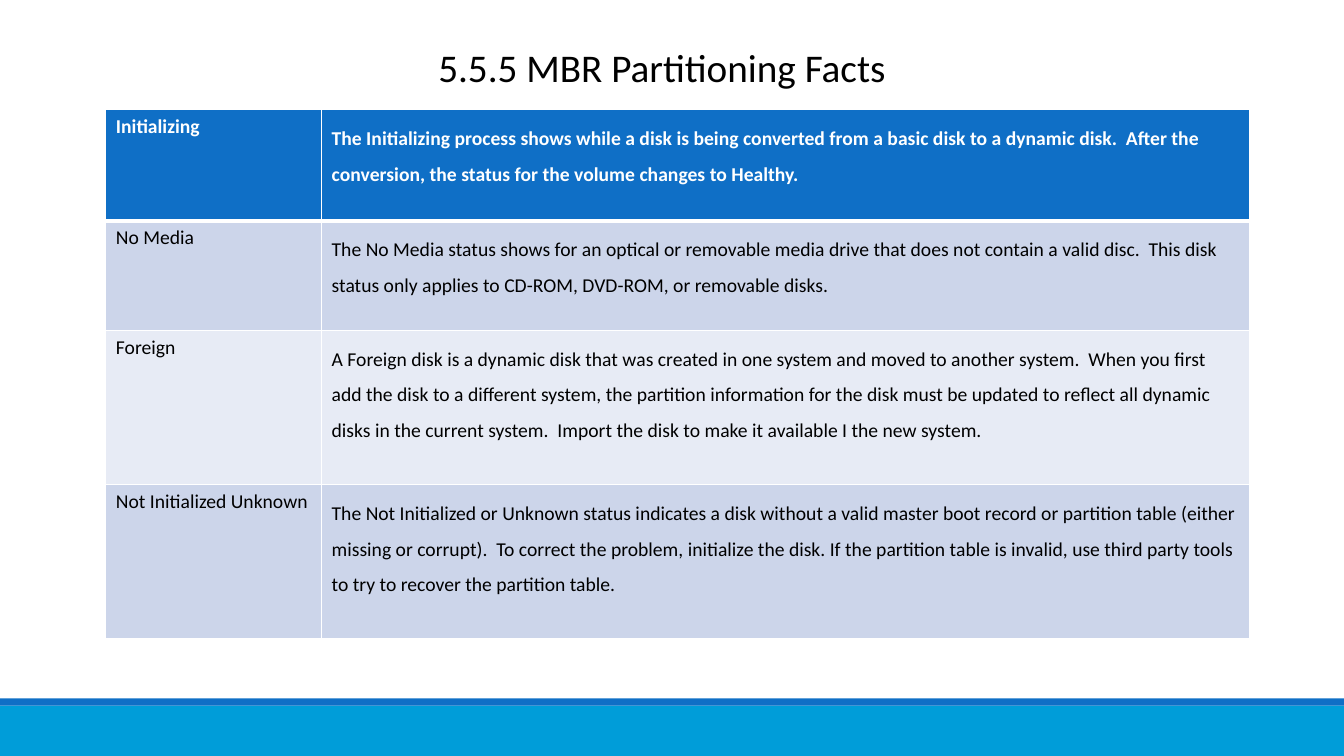
from dataclasses import dataclass

from lxml.etree import SubElement
from pptx import Presentation
from pptx.dml.color import RGBColor
from pptx.enum.shapes import MSO_SHAPE
from pptx.enum.text import PP_ALIGN
from pptx.oxml.ns import qn
from pptx.slide import Slide
from pptx.table import _Cell
from pptx.text.text import _Paragraph
from pptx.util import Inches, Pt


@dataclass(frozen=True)
class Theme:
    font: str = "Calibri"
    title_size: int = 28
    table_size: int = 14
    text: str = "000000"
    white: str = "FFFFFF"
    blue: str = "0F6FC6"
    cyan: str = "009DD9"
    dark_band: str = "CCD5EA"
    light_band: str = "E7EBF5"


@dataclass(frozen=True)
class Band:
    top: float
    height: float
    color: str


@dataclass(frozen=True)
class StatusRow:
    status: str
    description: str
    height: float


THEME = Theme()
SLIDE_WIDTH, SLIDE_HEIGHT = 13.33, 7.5
COLUMN_WIDTHS = (2.14, 9.2)
FOOTER_BANDS = (Band(7, 0.5, THEME.cyan), Band(6.93, 0.07, THEME.blue))
STATUS_ROWS = (
    StatusRow(
        "Initializing",
        "The Initializing process shows while a disk is being converted from a basic disk "
        "to a dynamic disk.  After the conversion, the status for the volume changes to Healthy.",
        1.1,
    ),
    StatusRow(
        "No Media",
        "The No Media status shows for an optical or removable media drive that does not "
        "contain a valid disc.  This disk status only applies to CD-ROM, DVD-ROM, or "
        "removable disks.",
        1.09,
    ),
    StatusRow(
        "Foreign",
        "A Foreign disk is a dynamic disk that was created in one system and moved to another "
        "system.  When you first add the disk to a different system, the partition information "
        "for the disk must be updated to reflect all dynamic disks in the current system.  "
        "Import the disk to make it available I the new system.",
        1.53,
    ),
    StatusRow(
        "Not Initialized Unknown",
        "The Not Initialized or Unknown status indicates a disk without a valid master boot "
        "record or partition table (either missing or corrupt).  To correct the problem, "
        "initialize the disk. If the partition table is invalid, use third party tools to try "
        "to recover the partition table.",
        1.53,
    ),
)


def style_paragraph(paragraph: _Paragraph, size: int, color: str, bold: bool = False) -> None:
    paragraph.font.name = THEME.font
    paragraph.font.size = Pt(size)
    paragraph.font.bold = bold
    paragraph.font.color.rgb = RGBColor.from_string(color)


def add_band(slide: Slide, band: Band) -> None:
    shape = slide.shapes.add_shape(
        MSO_SHAPE.RECTANGLE, 0, Inches(band.top), Inches(SLIDE_WIDTH), Inches(band.height)
    )
    shape.shadow.inherit = False
    shape.fill.solid()
    shape.fill.fore_color.rgb = RGBColor.from_string(band.color)
    shape.line.fill.background()


def add_title(slide: Slide, text: str) -> None:
    title = slide.shapes.add_textbox(Inches(2.55), Inches(0.38), Inches(8.03), Inches(0.57))
    title.text_frame.word_wrap = True
    paragraph = title.text_frame.paragraphs[0]
    paragraph.text = text
    paragraph.alignment = PP_ALIGN.CENTER
    style_paragraph(paragraph, THEME.title_size, THEME.text)


def set_borders(cell: _Cell, above: int, below: int) -> None:
    """Draw white borders; the widths above and below are in points."""
    properties = cell._tc.get_or_add_tcPr()
    widths = {"a:lnL": 1, "a:lnR": 1, "a:lnT": above, "a:lnB": below}
    for position, (tag, width) in enumerate(widths.items()):
        line = SubElement(properties, qn(tag), w=str(Pt(width)))
        fill = SubElement(line, qn("a:solidFill"))
        SubElement(fill, qn("a:srgbClr"), val=THEME.white)
        properties.insert(position, line)


def add_status_table(slide: Slide, rows: tuple[StatusRow, ...]) -> None:
    table = slide.shapes.add_table(
        len(rows),
        len(COLUMN_WIDTHS),
        Inches(1.05),
        Inches(1.09),
        Inches(sum(COLUMN_WIDTHS)),
        Inches(sum(row.height for row in rows)),
    ).table
    for column, width in zip(table.columns, COLUMN_WIDTHS):
        column.width = Inches(width)

    for row_index, row in enumerate(rows):
        table.rows[row_index].height = Inches(row.height)
        is_header = row_index == 0
        band_color = THEME.dark_band if row_index % 2 else THEME.light_band
        fill_color = THEME.blue if is_header else band_color
        text_color = THEME.white if is_header else THEME.text
        for column_index, text in enumerate((row.status, row.description)):
            cell = table.cell(row_index, column_index)
            cell.fill.solid()
            cell.fill.fore_color.rgb = RGBColor.from_string(fill_color)
            set_borders(cell, 3 if row_index == 1 else 1, 3 if is_header else 1)
            paragraph = cell.text_frame.paragraphs[0]
            paragraph.text = text
            paragraph.line_spacing = 1.5 if column_index else 1.0
            style_paragraph(paragraph, THEME.table_size, text_color, is_header)


def main() -> None:
    presentation = Presentation()
    presentation.slide_width = Inches(SLIDE_WIDTH)
    presentation.slide_height = Inches(SLIDE_HEIGHT)
    slide = presentation.slides.add_slide(presentation.slide_layouts[6])
    for band in FOOTER_BANDS:
        add_band(slide, band)
    add_title(slide, "5.5.5 MBR Partitioning Facts")
    add_status_table(slide, STATUS_ROWS)
    presentation.save("out.pptx")


if __name__ == "__main__":
    main()
